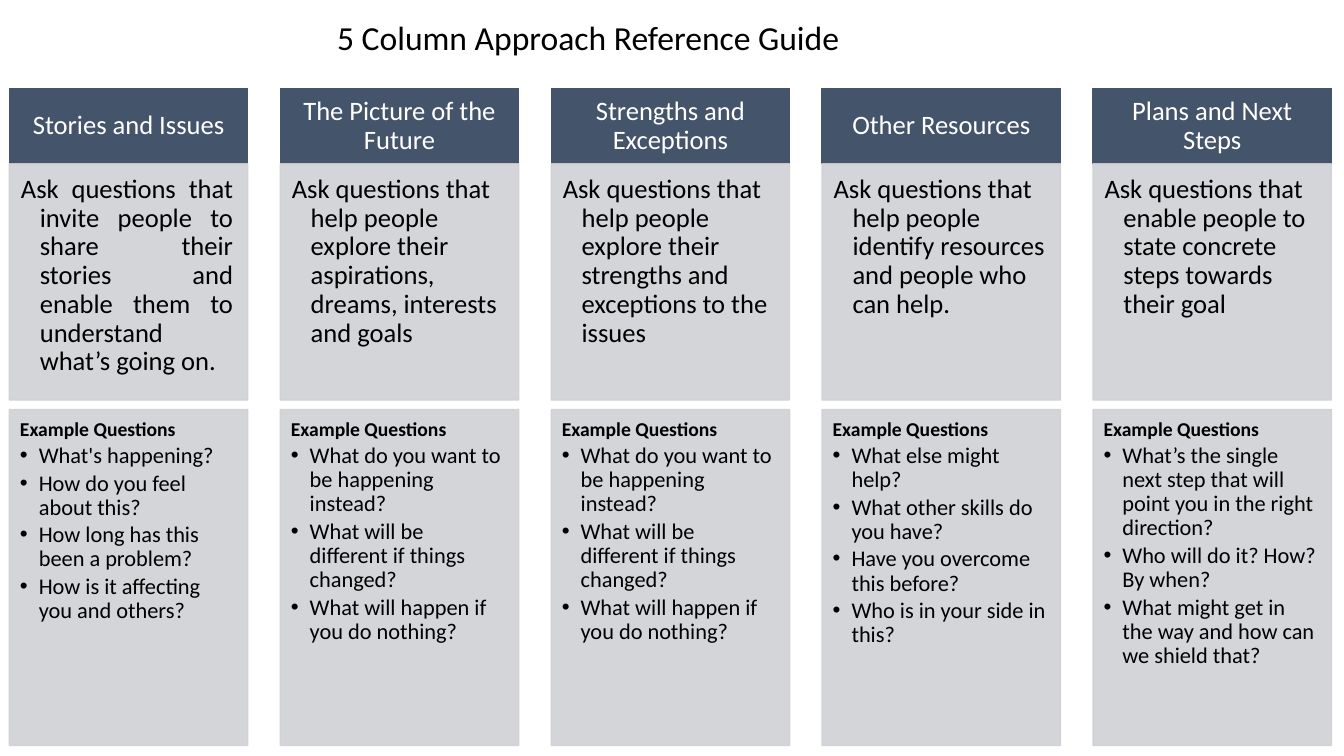
from copy import deepcopy

from lxml.etree import SubElement
from pptx import Presentation
from pptx.dml.color import RGBColor
from pptx.enum.shapes import MSO_SHAPE as Shape
from pptx.enum.text import MSO_ANCHOR as Anchor, MSO_AUTO_SIZE as Auto, PP_ALIGN as Align
from pptx.oxml.ns import qn
from pptx.util import Pt

SCALE = 9525
FONT = "Calibri"
NAVY = RGBColor(0x44, 0x54, 0x6A)
GREY = RGBColor(0xCF, 0xD1, 0xD4)
WHITE = RGBColor(0xFF, 0xFF, 0xFF)
BLACK = RGBColor(0x00, 0x00, 0x00)

LEFT, PITCH, WIDTH = 9, 258, 227
INDENT = 18
LABEL = "Example Questions"

COLUMNS = [
    ("Stories and Issues", Align.JUSTIFY,
     "Ask questions that invite people to share their stories and enable them "
     "to understand what’s going on.",
     ["What's happening?", "How do you feel about this?",
      "How long has this been a problem?", "How is it affecting you and others?"]),
    ("The Picture of the Future", Align.LEFT,
     "Ask questions that help people explore their aspirations, dreams, "
     "interests and goals",
     ["What do you want to be happening instead?",
      "What will be different if things changed?",
      "What will happen if you do nothing?"]),
    ("Strengths and Exceptions", Align.LEFT,
     "Ask questions that help people explore their strengths and exceptions "
     "to the issues",
     ["What do you want to be happening instead?",
      "What will be different if things changed?",
      "What will happen if you do nothing?"]),
    ("Other Resources", Align.LEFT,
     "Ask questions that help people identify resources and people who can help.",
     ["What else might help?", "What other skills do you have?",
      "Have you overcome this before?", "Who is in your side in this?"]),
    ("Plans and Next Steps", Align.LEFT,
     "Ask questions that enable people to state concrete steps towards their goal",
     ["What’s the single next step that will point you in the right direction?",
      "Who will do it? How? By when?",
      "What might get in the way and how can we shield that?"]),
]


def px(n):
    return int(n * SCALE)


def place(shape, x, y, w, h):
    shape.left, shape.top, shape.width, shape.height = map(px, (x, y, w, h))


def paint(shape, color, alpha=100):
    shape.fill.solid()
    shape.fill.fore_color.rgb = color
    shape.line.color.rgb = color
    shape.line.width = Pt(1)
    if alpha < 100:
        for tint in shape._element.spPr.iter(qn("a:srgbClr")):
            SubElement(tint, qn("a:alpha")).set("val", str(alpha * 1000))


def frame(shape, pads, anchor=Anchor.TOP):
    body = shape.text_frame
    body.word_wrap = True
    body.auto_size = Auto.NONE
    body.vertical_anchor = anchor
    (body.margin_left, body.margin_top,
     body.margin_right, body.margin_bottom) = map(px, pads)
    return body


def style(para, size, color=BLACK, align=Align.LEFT, bold=False, after=0.15):
    para.alignment = align
    para.line_spacing = 0.9
    para.space_before = Pt(0)
    para.space_after = Pt(size * after)
    for run in para.runs:
        font = run.font
        font.name, font.size, font.bold = FONT, Pt(size), bold
        font.color.rgb = color


def hang(para, left, first):
    props = para._p.get_or_add_pPr()
    props.set("marL", str(px(left)))
    props.set("indent", str(px(first)))
    return props


def add_box(slide, x, y, h, color, alpha=100):
    box = slide.shapes.add_shape(Shape.RECTANGLE, px(x), px(y), px(WIDTH), px(h))
    box.shadow.inherit = False
    paint(box, color, alpha)
    return box


def add_head(slide, x, text):
    body = frame(add_box(slide, x, 84, 72, NAVY), (14, 8, 14, 8), Anchor.MIDDLE)
    body.text = text
    style(body.paragraphs[0], 19, WHITE, Align.CENTER, after=0.35)


def add_prompt(slide, x, text, align):
    body = frame(add_box(slide, x, 156, 225, GREY, 90), (11, 11, 14, 16))
    body.text = text
    para = body.paragraphs[0]
    hang(para, INDENT, -INDENT)
    style(para, 19, align=align)


def fill_list(holder, x, items):
    place(holder, x, 390, WIDTH, 320)
    paint(holder, GREY, 90)
    body = frame(holder, (10, 10, 13, 15))
    body.text = "\n".join([LABEL, *items])
    label, *points = body.paragraphs
    SubElement(hang(label, 0, 0), qn("a:buNone"))
    style(label, 14, bold=True)
    for point in points:
        SubElement(hang(point, INDENT, -INDENT), qn("a:buChar")).set("char", "•")
        style(point, 16)


def fill_title(title):
    place(title, 311, 11, 603, 48)
    body = frame(title, (10, 5, 10, 5))
    body.text = "5 Column Approach Reference Guide"
    para = body.paragraphs[0]
    style(para, 24, after=0)
    para.line_spacing = 1.0


def extend(layout, count):
    base = layout.placeholders[1]._element
    for num in range(1, count):
        twin = deepcopy(base)
        twin.xpath(".//p:cNvPr")[0].set("id", str(20 + num))
        twin.xpath(".//p:ph")[0].set("idx", str(20 + num))
        base.getparent().append(twin)


def main():
    deck = Presentation()
    deck.slide_width, deck.slide_height = px(1280), px(720)
    layout = deck.slide_layouts[1]
    extend(layout, len(COLUMNS))
    slide = deck.slides.add_slide(layout)
    title, *lists = slide.placeholders
    fill_title(title)
    for num, (holder, column) in enumerate(zip(lists, COLUMNS)):
        head, align, prompt, items = column
        x = LEFT + num * PITCH
        add_head(slide, x, head)
        add_prompt(slide, x, prompt, align)
        fill_list(holder, x, items)
    deck.save("out.pptx")


if __name__ == "__main__":
    main()
